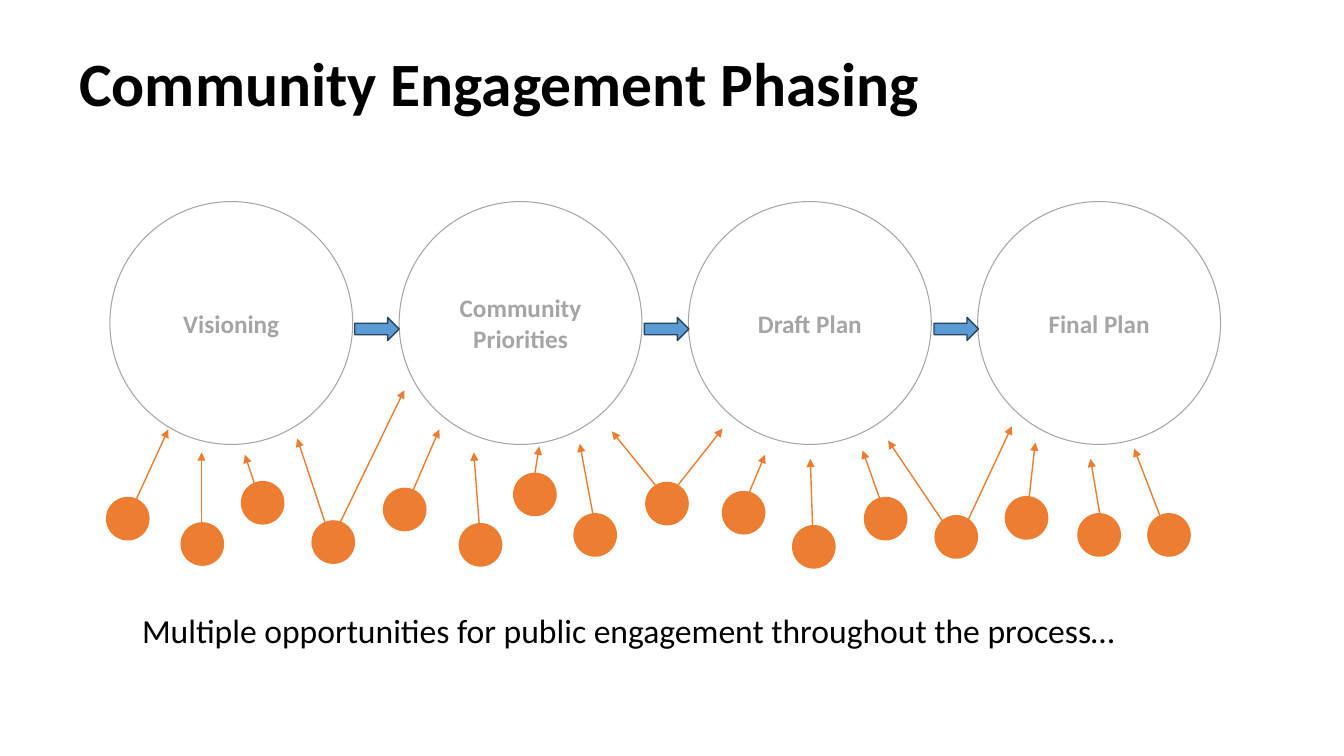
from lxml import etree
from pptx import Presentation
from pptx.dml.color import RGBColor
from pptx.enum.shapes import MSO_CONNECTOR, MSO_SHAPE
from pptx.enum.text import MSO_ANCHOR, PP_ALIGN
from pptx.oxml.ns import qn
from pptx.util import Cm, Pt

OVAL = MSO_SHAPE.OVAL
RIGHT_ARROW = MSO_SHAPE.RIGHT_ARROW
STRAIGHT = MSO_CONNECTOR.STRAIGHT
TOP, MIDDLE = MSO_ANCHOR.TOP, MSO_ANCHOR.MIDDLE
LEFT, CENTER = PP_ALIGN.LEFT, PP_ALIGN.CENTER

BLACK, GREY, ORANGE = "000000", "A5A5A5", "ED7D31"
BLUE, NAVY = "5B9BD5", "28445D"

PHASES = [["Visioning"], ["Community", "Priorities"], ["Draft Plan"], ["Final Plan"]]
PHASE_LEFT, PHASE_TOP, PHASE_SIZE, PHASE_PITCH = 2.77, 5.08, 6.12, 7.29
STEP_LEFT, STEP_TOP, STEP_PITCH = 8.94, 8, 7.3
DOT_SIZE = 1.1

EVENTS = [
    (2.67, 12.52, [(3.23, 13.03, 4.24, 10.82)]),
    (4.55, 13.16, [(5.08, 13.72, 5.08, 11.4)]),
    (6.07, 12.12, [(6.6, 12.75, 6.17, 11.46)]),
    (7.85, 13.11, [(8.38, 13.74, 7.49, 11.05), (8.43, 13.46, 10.19, 9.83)]),
    (9.65, 12.29, [(10.24, 12.75, 11.07, 10.82)]),
    (11.56, 13.18, [(12.12, 13.79, 11.94, 11.4)]),
    (12.93, 11.91, [(13.41, 12.34, 13.59, 11.25)]),
    (14.45, 12.93, [(15.06, 13.59, 14.61, 11.18)]),
    (16.26, 12.14, [(16.71, 12.7, 18.21, 10.8), (16.94, 12.75, 15.42, 10.87)]),
    (18.19, 12.37, [(18.62, 13.03, 19.28, 11.46)]),
    (19.96, 13.23, [(20.5, 13.94, 20.42, 11.56)]),
    (21.77, 12.52, [(22.38, 13.16, 21.74, 11.35)]),
    (23.55, 12.98, [(24.03, 13.54, 22.38, 11.1), (24.16, 13.61, 25.5, 10.74)]),
    (25.32, 12.5, [(25.88, 13.03, 26.09, 11.15)]),
    (27.15, 12.93, [(27.81, 13.51, 27.48, 11.56)]),
    (28.91, 12.93, [(29.41, 13.46, 28.58, 11.3)]),
]


def rgb(value):
    return RGBColor.from_string(value)


class SlideBuilder:
    font = "Calibri"

    def __init__(self, slide):
        self.slide = slide

    def add_lines(self, tf, lines, size, color, bold=False, align=LEFT, anchor=TOP, spacing=1.0):
        tf.word_wrap = True
        tf.vertical_anchor = anchor
        for i, line in enumerate(lines):
            p = tf.add_paragraph() if i else tf.paragraphs[0]
            p.alignment = align
            p.line_spacing = spacing
            r = p.add_run()
            r.text = line
            r.font.name = self.font
            r.font.size = Pt(size)
            r.font.bold = bold
            r.font.color.rgb = rgb(color)

    def text(self, x, y, w, h, line, size, **style):
        box = self.slide.shapes.add_textbox(Cm(x), Cm(y), Cm(w), Cm(h))
        self.add_lines(box.text_frame, [line], size, BLACK, **style)

    def shape(self, kind, x, y, w, h, fill=None, line=None, weight=1):
        sp = self.slide.shapes.add_shape(kind, Cm(x), Cm(y), Cm(w), Cm(h))
        sp.shadow.inherit = False
        if fill:
            sp.fill.solid()
            sp.fill.fore_color.rgb = rgb(fill)
        else:
            sp.fill.background()
        if line:
            sp.line.color.rgb = rgb(line)
            sp.line.width = Pt(weight)
        else:
            sp.line.fill.background()
        return sp

    def phase(self, x, lines):
        sp = self.shape(OVAL, x, PHASE_TOP, PHASE_SIZE, PHASE_SIZE, line=GREY, weight=0.75)
        self.add_lines(sp.text_frame, lines, 18, GREY, bold=True, align=CENTER, anchor=MIDDLE)

    def arrow(self, x1, y1, x2, y2):
        cx = self.slide.shapes.add_connector(STRAIGHT, Cm(x1), Cm(y1), Cm(x2), Cm(y2))
        cx.line.color.rgb = rgb(ORANGE)
        cx.line.width = Pt(1)
        sp_pr = cx._element.spPr
        etree.SubElement(sp_pr.find(qn("a:ln")), qn("a:tailEnd"), type="triangle")
        etree.SubElement(sp_pr, qn("a:effectLst"))


def main():
    prs = Presentation()
    prs.slide_width, prs.slide_height = Cm(33.87), Cm(19.05)
    s = SlideBuilder(prs.slides.add_slide(prs.slide_layouts[6]))

    s.text(1.75, 1.19, 25.4, 1.96, "Community Engagement Phasing", 44,
           bold=True, anchor=MIDDLE, spacing=0.9)
    for i, lines in enumerate(PHASES):
        s.phase(PHASE_LEFT + i * PHASE_PITCH, lines)
    for i in range(len(PHASES) - 1):
        s.shape(RIGHT_ARROW, STEP_LEFT + i * STEP_PITCH, STEP_TOP, 1.12, 0.58, BLUE, NAVY)
    for x, y, arrows in EVENTS:
        s.shape(OVAL, x, y, DOT_SIZE, DOT_SIZE, ORANGE)
        for ends in arrows:
            s.arrow(*ends)
    s.text(3.33, 15.24, 26.29, 1.27,
           "Multiple opportunities for public engagement throughout the process…", 24)

    prs.save("out.pptx")


if __name__ == "__main__":
    main()
